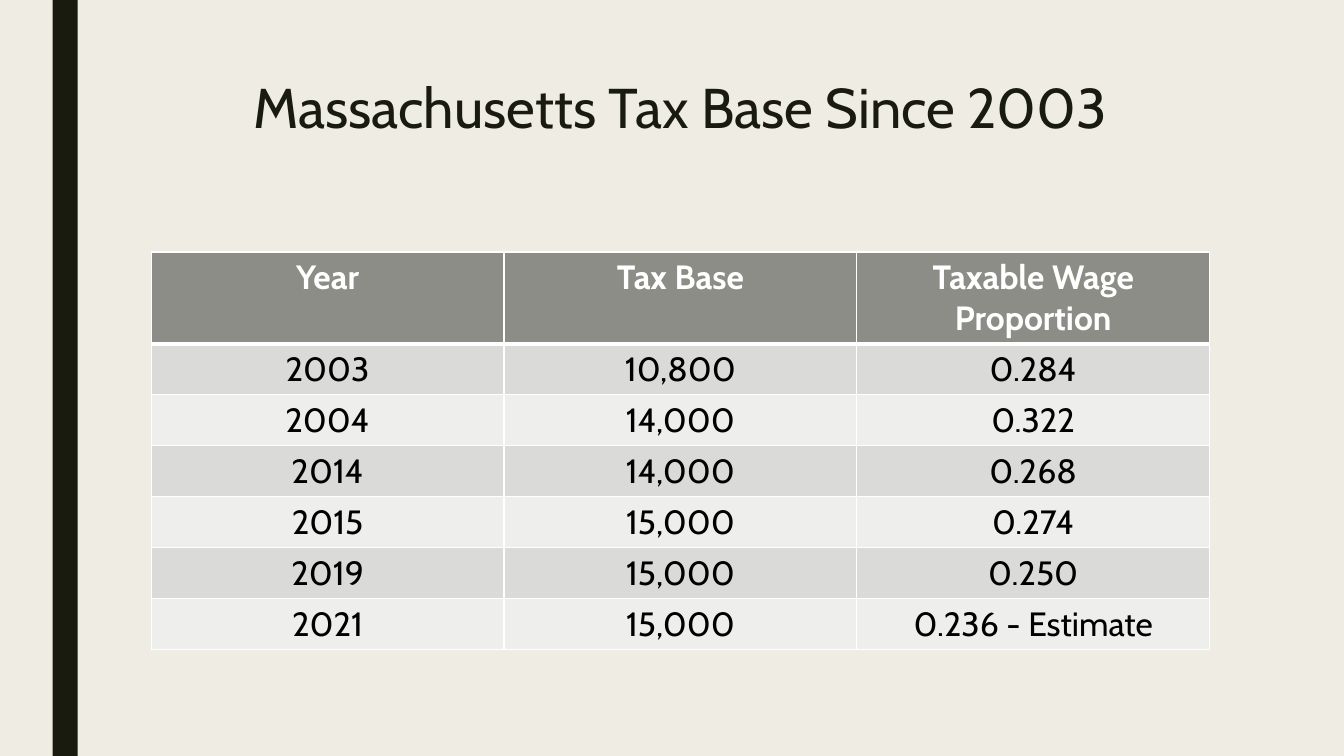
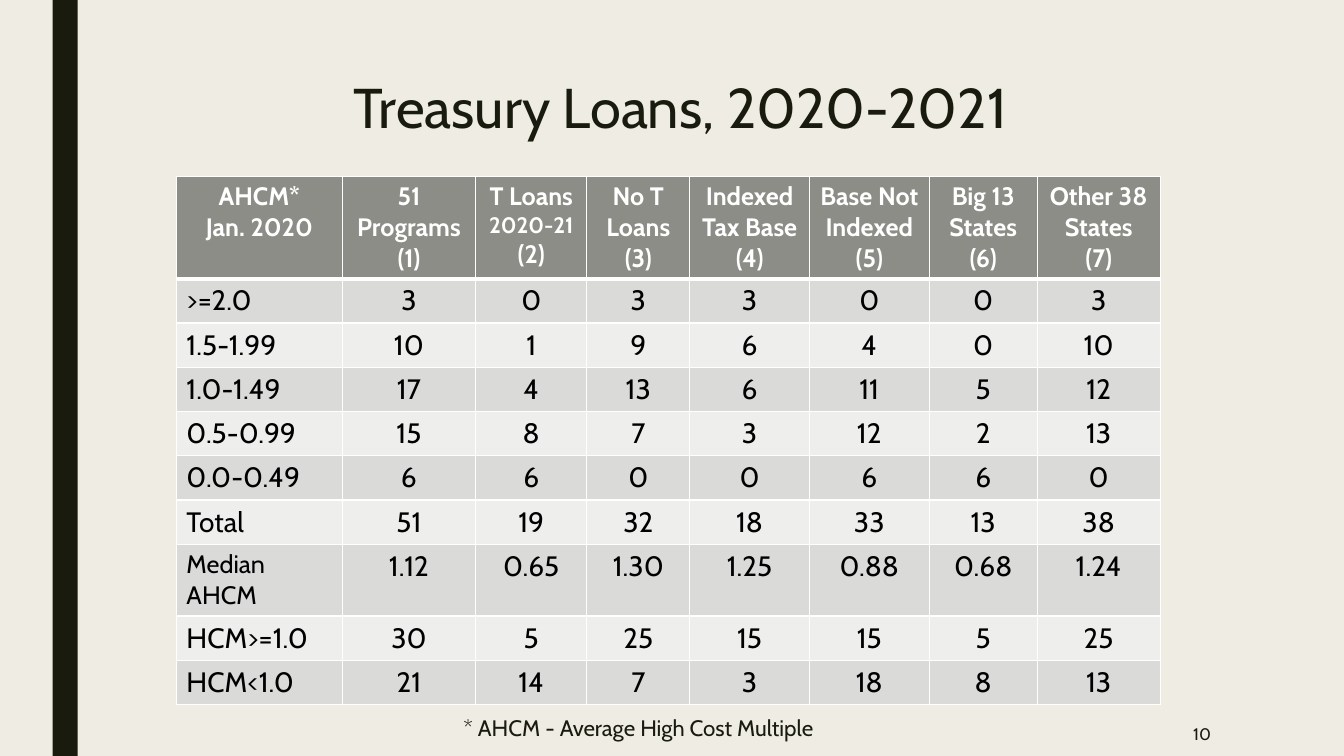
from lxml.etree import SubElement
from pptx import Presentation
from pptx.dml.color import RGBColor
from pptx.enum.shapes import MSO_SHAPE as Preset
from pptx.enum.text import MSO_ANCHOR as Anchor, MSO_AUTO_SIZE as AutoSize, PP_ALIGN as Align
from pptx.oxml.ns import qn
from pptx.util import Pt

PX = 9525
FONT = "Cabin"
COLORS = {
    "paper": "EFEDE3",
    "ink": "191B0E",
    "header": "8C8D86",
    "odd": "DADBD9",
    "even": "EEEEED",
    "white": "FFFFFF",
    "black": "000000",
}
FRAME = {"word_wrap": True, "auto_size": AutoSize.NONE}
LINE_SIZES = {"2020-21": 16, "Median AHCM": 18}

DECK = [
    {
        "title": "Massachusetts Tax Base Since 2003",
        "place": (144, 240),
        "columns": [336] * 3,
        "heights": [87] + [48] * 6,
        "sizes": (24, 24),
        "label_align": Align.CENTER,
        "rows": [
            ["Year", "Tax Base", "Taxable Wage Proportion"],
            ["2003", "10,800", "0.284"],
            ["2004", "14,000", "0.322"],
            ["2014", "14,000", "0.268"],
            ["2015", "15,000", "0.274"],
            ["2019", "15,000", "0.250"],
            ["2021", "15,000", "0.236 - Estimate"],
        ],
        "notes": [],
    },
    {
        "title": "Treasury Loans, 2020-2021",
        "place": (168, 168),
        "columns": [158, 127, 106, 98, 114, 114, 103, 117],
        "heights": [97] + [42] * 6 + [68] + [42] * 2,
        "sizes": (18, 20),
        "label_align": Align.LEFT,
        "rows": [
            ["AHCM*\nJan. 2020", "51 Programs\n(1)", "T Loans\n2020-21\n(2)", "No T\nLoans\n(3)",
             "Indexed Tax Base\n(4)", "Base Not Indexed\n(5)", "Big 13 States\n(6)",
             "Other 38 States\n(7)"],
            [">=2.0", "3", "0", "3", "3", "0", "0", "3"],
            ["1.5-1.99", "10", "1", "9", "6", "4", "0", "10"],
            ["1.0-1.49", "17", "4", "13", "6", "11", "5", "12"],
            ["0.5-0.99", "15", "8", "7", "3", "12", "2", "13"],
            ["0.0-0.49", "6", "6", "0", "0", "6", "6", "0"],
            ["Total", "51", "19", "32", "18", "33", "13", "38"],
            ["Median AHCM", "1.12", "0.65", "1.30", "1.25", "0.88", "0.68", "1.24"],
            ["HCM>=1.0", "30", "5", "25", "15", "15", "5", "25"],
            ["HCM<1.0", "21", "14", "7", "3", "18", "8", "13"],
        ],
        "notes": [
            ("10", (995, 678, 168, 42), 12, Align.RIGHT),
            ("* AHCM - Average High Cost Multiple", (432, 674, 480, 38), 16, Align.LEFT),
        ],
    },
]


def write(frame, text, size, color, align, bold=False):
    frame.text = text
    for line in frame.paragraphs:
        line.alignment = align
        font = line.runs[0].font
        font.color.rgb = RGBColor.from_string(COLORS[color])
        style = {"name": FONT, "size": Pt(LINE_SIZES.get(line.text, size)), "bold": bold}
        for key, value in style.items():
            setattr(font, key, value)


def add_borders(cell, widths):
    props = cell._tc.get_or_add_tcPr()
    for index, (side, width) in enumerate(widths.items()):
        edge = props.makeelement(qn(f"a:{side}"), {"w": str(Pt(width))})
        fill = SubElement(edge, qn("a:solidFill"))
        SubElement(fill, qn("a:srgbClr"), val=COLORS["white"])
        props.insert(index, edge)


deck = Presentation()
deck.slide_width, deck.slide_height = 1280 * PX, 720 * PX
backdrop = deck.slide_master.background.fill
backdrop.solid()
backdrop.fore_color.rgb = RGBColor.from_string(COLORS["paper"])

for page in DECK:
    slide = deck.slides.add_slide(deck.slide_layouts[5])

    band = slide.shapes.add_shape(Preset.RECTANGLE, 50 * PX, 0, 24 * PX, 720 * PX)
    band.shadow.inherit = False
    band.fill.solid()
    band.fill.fore_color.rgb = RGBColor.from_string(COLORS["ink"])
    band.line.fill.background()

    title = slide.shapes.title
    for side, length in {"left": 144, "top": 72, "width": 1008, "height": 156}.items():
        setattr(title, side, length * PX)
    write(title.text_frame, page["title"], 40, "ink", Align.CENTER)
    title.text_frame.paragraphs[0].line_spacing = 0.89
    for key, value in {**FRAME, "vertical_anchor": Anchor.TOP}.items():
        setattr(title.text_frame, key, value)

    left, top = page["place"]
    rows, columns, heights = page["rows"], page["columns"], page["heights"]
    table = slide.shapes.add_table(
        len(rows), len(columns), left * PX, top * PX, sum(columns) * PX, sum(heights) * PX
    ).table
    table.horz_banding = False
    for column, width in zip(table.columns, columns):
        column.width = width * PX
    for row, height in zip(table.rows, heights):
        row.height = height * PX

    header_size, body_size = page["sizes"]
    for r, values in enumerate(rows):
        is_header = r == 0
        shade = "header" if is_header else "odd" if r % 2 else "even"
        for c, value in enumerate(values):
            cell = table.cell(r, c)
            cell.fill.solid()
            cell.fill.fore_color.rgb = RGBColor.from_string(COLORS[shade])
            add_borders(cell, {"lnL": 1, "lnR": 1, "lnT": 3 if r == 1 else 1, "lnB": 3 if is_header else 1})
            align = page["label_align"] if c == 0 and not is_header else Align.CENTER
            write(cell.text_frame, value, header_size if is_header else body_size,
                  "white" if is_header else "black", align, is_header)

    for text, place, size, align in page["notes"]:
        note = slide.shapes.add_textbox(*(length * PX for length in place)).text_frame
        for key, value in {**FRAME, "vertical_anchor": Anchor.MIDDLE}.items():
            setattr(note, key, value)
        write(note, text, size, "ink", align)

deck.save("out.pptx")
